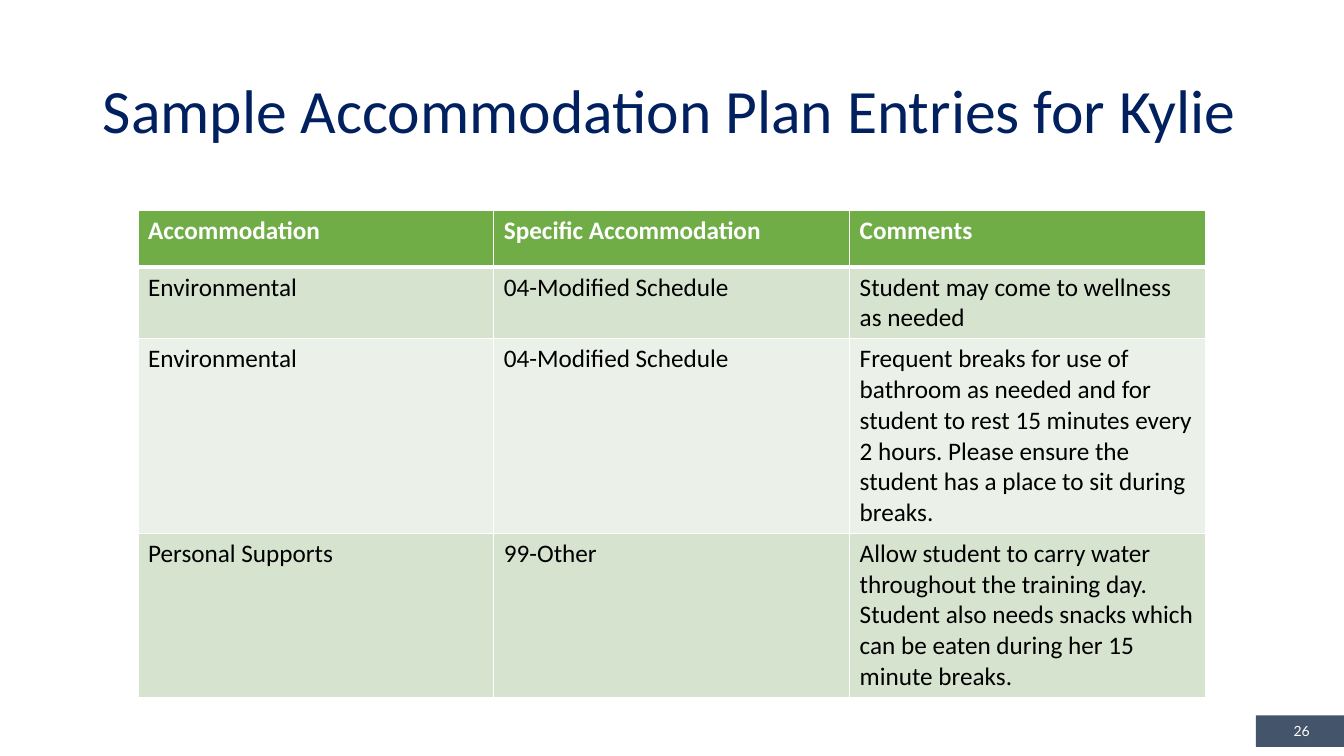
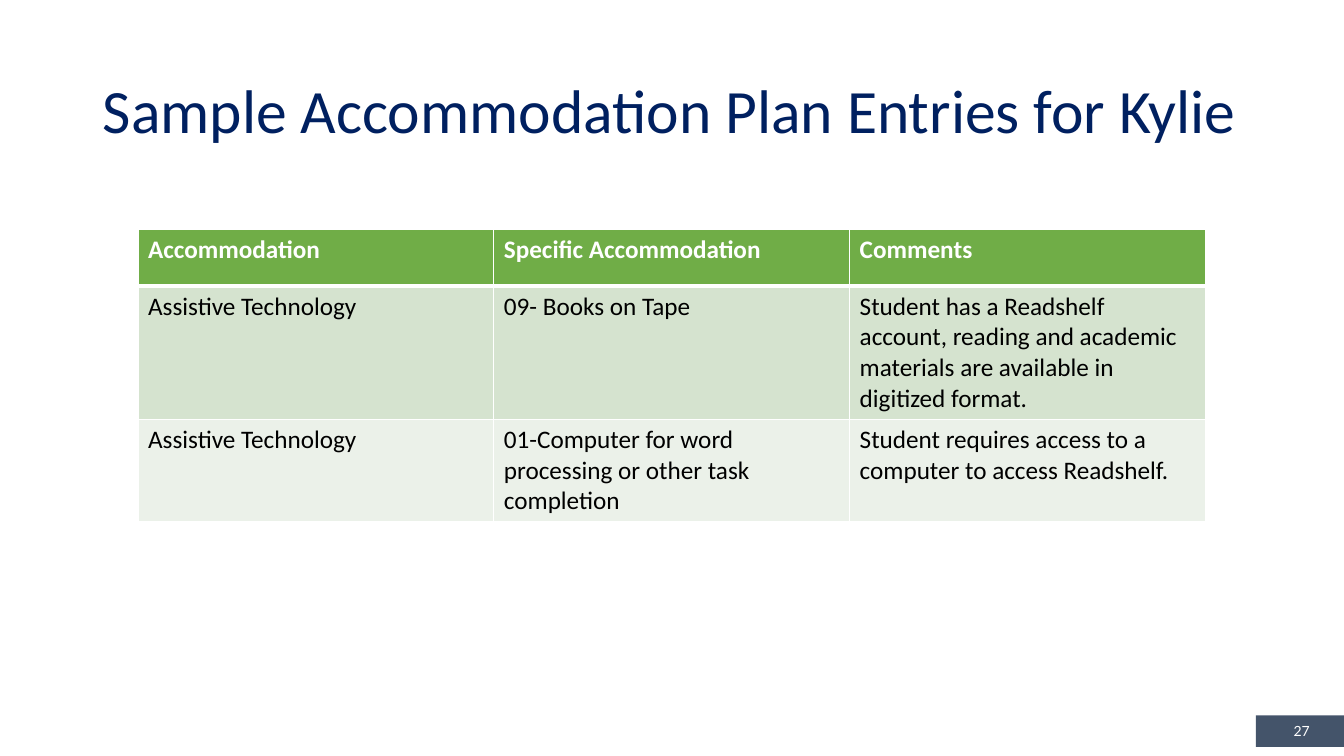
from lxml.etree import SubElement
from pptx import Presentation
from pptx.dml.color import RGBColor
from pptx.enum.shapes import MSO_SHAPE
from pptx.enum.text import MSO_ANCHOR, PP_ALIGN
from pptx.oxml.ns import qn
from pptx.util import Cm, Pt

NAVY, SLATE, WHITE, BLACK = "002060", "44546A", "FFFFFF", "000000"
GREEN, BANDS = "70AD47", ("D5E3CF", "EBF1E9")
TITLE = "Sample Accommodation Plan Entries for Kylie"
HEADS = ("Accommodation", "Specific Accommodation", "Comments")
FIRST = 26
PLANS = [
    (5.31, [
        ("Environmental", "04-Modified Schedule",
         "Student may come to wellness as needed"),
        ("Environmental", "04-Modified Schedule",
         "Frequent breaks for use of bathroom as needed and for student to "
         "rest 15 minutes every 2 hours. Please ensure the student has a "
         "place to sit during breaks."),
        ("Personal Supports", "99-Other",
         "Allow student to carry water throughout the training day. Student "
         "also needs snacks which can be eaten during her 15 minute breaks."),
    ]),
    (5.79, [
        ("Assistive Technology", "09- Books on Tape",
         "Student has a Readshelf account, reading and academic materials "
         "are available in digitized format."),
        ("Assistive Technology",
         "01-Computer for word processing or other task completion",
         "Student requires access to a computer to access Readshelf."),
    ]),
]


def paint(fill, color):
    """Make a fill solid in a hex colour."""
    fill.solid()
    fill.fore_color.rgb = RGBColor.from_string(color)


def write(frame, text, size, color, font="Calibri", bold=False,
          align=PP_ALIGN.LEFT):
    """Put one styled paragraph in a text frame."""
    frame.text = text
    para = frame.paragraphs[0]
    para.alignment = align
    style = para.runs[0].font
    style.name, style.size, style.bold = font, Pt(size), bold
    style.color.rgb = RGBColor.from_string(color)
    return para


def add_title(slide):
    """Place and format the title."""
    title = slide.shapes.title
    title.left, title.top = Cm(2.34), Cm(1.02)
    title.width, title.height = Cm(29.21), Cm(3.68)
    frame = title.text_frame
    frame.vertical_anchor = MSO_ANCHOR.MIDDLE
    write(frame, TITLE, 44, NAVY).line_spacing = 0.9


def add_number(slide, number):
    """Add the page number block in the corner."""
    box = slide.shapes.add_shape(
        MSO_SHAPE.RECTANGLE, Cm(31.65), Cm(18.03), Cm(2.22), Cm(0.79))
    box.shadow.inherit = False
    paint(box.fill, SLATE)
    box.line.fill.background()
    box.text_frame.vertical_anchor = MSO_ANCHOR.MIDDLE
    write(box.text_frame, f" {number}", 10, WHITE, "Lato",
          align=PP_ALIGN.CENTER)


def add_edges(cell, top, bottom):
    """Draw white cell borders with widths in points."""
    props = cell._tc.get_or_add_tcPr()
    for side, width in zip("LRTB", (1, 1, top, bottom)):
        line = SubElement(props, qn(f"a:ln{side}"), w=str(Pt(width)))
        fill = SubElement(line, qn("a:solidFill"))
        SubElement(fill, qn("a:srgbClr"), val=WHITE)


def add_plan(slide, top, entries):
    """Add the table with a green head and banded rows."""
    rows = [HEADS, *entries]
    table = slide.shapes.add_table(
        len(rows), len(HEADS), Cm(3.48), Cm(top),
        Cm(26.9), Cm(1.42 * len(rows))).table
    for r, row in enumerate(rows):
        head = r == 0
        for c, text in enumerate(row):
            cell = table.cell(r, c)
            add_edges(cell, 3 if r == 1 else 1, 3 if head else 1)
            paint(cell.fill, GREEN if head else BANDS[(r - 1) % 2])
            write(cell.text_frame, text, 18, WHITE if head else BLACK,
                  bold=head)


def main():
    """Build and save the slides."""
    deck = Presentation()
    deck.slide_width, deck.slide_height = Cm(33.87), Cm(19.05)
    for number, (top, entries) in enumerate(PLANS, FIRST):
        slide = deck.slides.add_slide(deck.slide_layouts[5])
        add_title(slide)
        add_plan(slide, top, entries)
        add_number(slide, number)
    deck.save("out.pptx")


if __name__ == "__main__":
    main()
